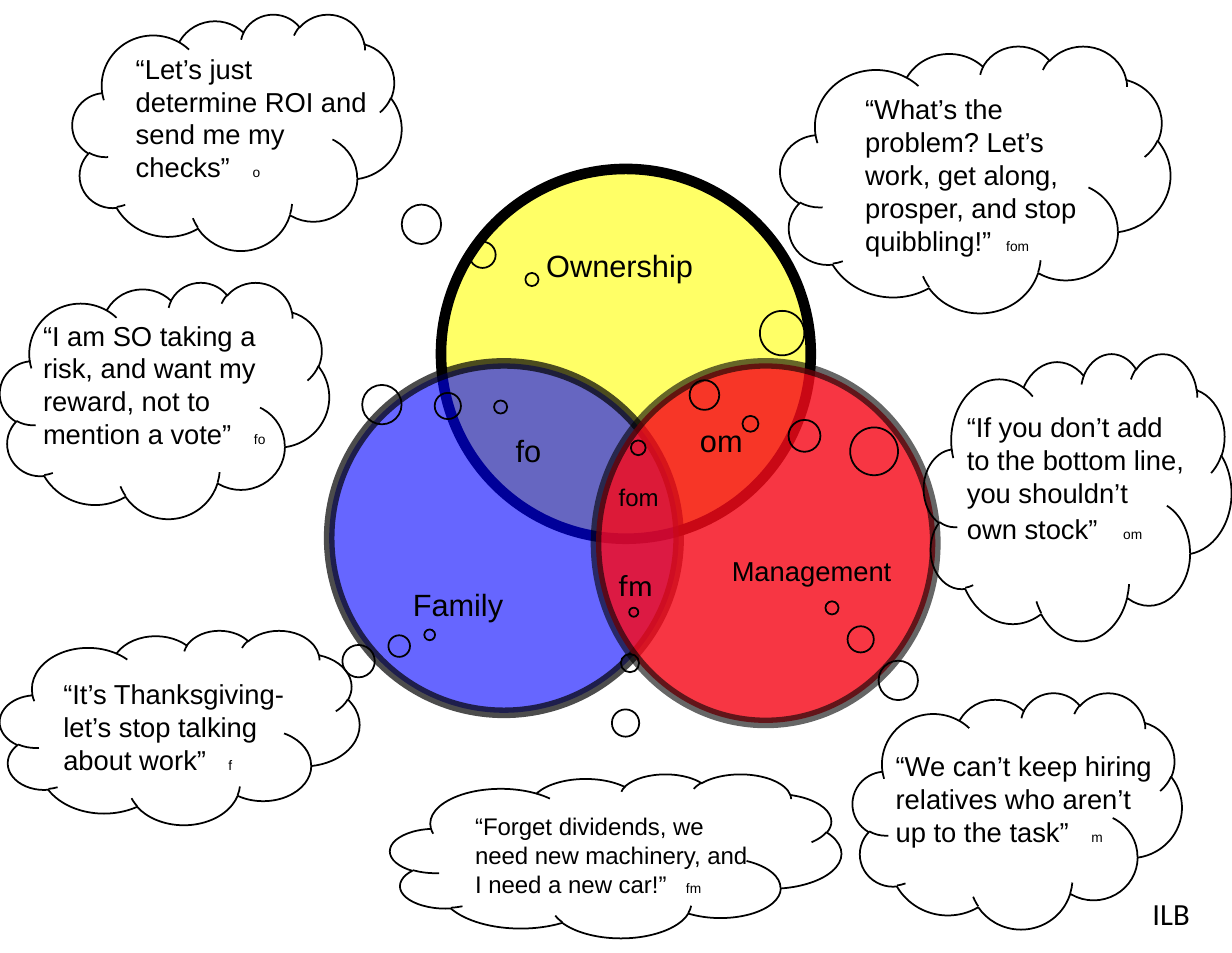
from dataclasses import dataclass

from lxml import etree
from pptx import Presentation
from pptx.dml.color import RGBColor
from pptx.enum.shapes import MSO_SHAPE
from pptx.enum.text import MSO_AUTO_SIZE
from pptx.oxml.ns import qn
from pptx.util import Emu, Pt

OVAL = MSO_SHAPE.OVAL
CLOUD = MSO_SHAPE.CLOUD_CALLOUT
GROW = MSO_AUTO_SIZE.SHAPE_TO_FIT_TEXT
BLANK_LAYOUT = 6
SLIDE_WIDTH = Pt(698)
SLIDE_HEIGHT = Pt(540)
EMU_PER_PX = 9144  # 100 px to the inch
BLACK = "000000"
TAG_SIZE = 7.8

Box = tuple[int, int, int, int]  # left, top, width, height in px


@dataclass(frozen=True)
class Circle:
    box: Box
    fill: str
    fill_opacity: int
    line_opacity: int


@dataclass(frozen=True)
class Label:
    text: str
    box: Box
    size: float = 17.4
    font: str = "Arial"
    wrap: bool = True


@dataclass(frozen=True)
class Quote:
    words: str
    tag: str
    text_box: Box
    tag_position: int
    cloud_box: Box
    tail: tuple[float, float]
    size: float = 15.5
    gap_size: float = 15.5


CIRCLES = [
    Circle((347, 133, 291, 291), "FFFF00", 60, 100),
    Circle((259, 286, 275, 275), "0000FF", 60, 69),
    Circle((469, 286, 267, 283), "F60A1A", 82, 60),
]

LABELS = [
    Label("Ownership", (420, 189, 170, 39)),
    Label("Management", (566, 431, 149, 62), size=15.5),
    Label("Family", (315, 456, 129, 39)),
    Label("fo", (396, 335, 57, 39)),
    Label("fom", (477, 375, 57, 33), size=13.6),
    Label("om", (541, 327, 57, 39)),
    Label("fm", (477, 440, 47, 39), font="Calibri", wrap=False),
    Label("ILB", (897, 699, 113, 39), font="Calibri"),
]

QUOTES = [
    Quote("“It’s Thanksgiving- let’s stop talking about work”", "f",
          (40, 528, 210, 88), 130, (0, 496, 283, 153), (0.695, -0.476)),
    Quote("“Forget dividends, we need new machinery, and I need a new car!”", "fm",
          (364, 634, 234, 79), 166, (307, 609, 355, 129), (0.04, -1.486),
          size=13.6, gap_size=13.6),
    Quote("“If you don’t add\vto the bottom line, you shouldn’t\vown stock”", "om",
          (751, 318, 202, 117), 123, (727, 278, 242, 226), (-1.064, -0.254),
          gap_size=17.4),
    Quote("“What’s the problem? Let’s work, get along, prosper, and stop quibbling!”",
          "fom", (671, 68, 186, 154), 111, (614, 36, 307, 210), (-0.864, 1.007)),
    Quote("“Let’s just determine ROI and send me my checks”", "o",
          (97, 36, 210, 113), 92, (57, 11, 259, 186), (0.896, 0.624)),
    Quote("“I am SO taking a risk, and want my reward, not to mention a vote”", "fo",
          (24, 246, 202, 113), 166, (0, 222, 259, 186), (1.021, 0.029)),
    Quote("“We can’t keep hiring relatives who aren’t up to the task”", "m",
          (695, 585, 234, 88), 154, (671, 545, 259, 186), (-0.563, -0.858)),
]


def px(length: int) -> Emu:
    return Emu(length * EMU_PER_PX)


def color(value: str) -> RGBColor:
    return RGBColor.from_string(value)


def add_outlined_shape(slide, kind, box: Box, line_width: float):
    shape = slide.shapes.add_shape(kind, *map(px, box))
    shape.shadow.inherit = False
    shape.fill.background()
    shape.line.color.rgb = color(BLACK)
    shape.line.width = Pt(line_width)
    return shape


def add_circle(slide, circle: Circle) -> None:
    shape = add_outlined_shape(slide, OVAL, circle.box, 6)
    shape.fill.solid()
    shape.fill.fore_color.rgb = color(circle.fill)
    # The fill colour comes before the line colour in the shape
    opacities = (circle.fill_opacity, circle.line_opacity)
    for element, opacity in zip(list(shape.element.iter(qn("a:srgbClr"))), opacities):
        etree.SubElement(element, qn("a:alpha"), val=str(opacity * 1000))


def add_text(slide, text: str, box: Box, size: float, font: str = "Arial",
             wrap: bool = True):
    shape = slide.shapes.add_textbox(*map(px, box))
    shape.text_frame.word_wrap = wrap
    shape.text_frame.auto_size = GROW
    paragraph = shape.text_frame.paragraphs[0]
    paragraph.text = text
    paragraph.font.name = font
    paragraph.font.size = Pt(size)
    paragraph.font.color.rgb = color(BLACK)
    return shape


def add_quote_text(slide, quote: Quote) -> None:
    shape = add_text(slide, quote.words, quote.text_box, quote.size)
    paragraph = shape.text_frame.paragraphs[0]
    for text, size in (("\t", quote.gap_size), (quote.tag, TAG_SIZE)):
        run = paragraph.add_run()
        run.text = text
        run.font.size = Pt(size)
    # A tab stop sets the small tag apart from the words
    properties = next(shape.element.iter(qn("a:pPr")))
    tab_list = etree.Element(qn("a:tabLst"))
    etree.SubElement(tab_list, qn("a:tab"), pos=str(int(px(quote.tag_position))), algn="l")
    properties.insert(0, tab_list)


def add_cloud(slide, quote: Quote) -> None:
    cloud = add_outlined_shape(slide, CLOUD, quote.cloud_box, 1)
    for index, value in enumerate(quote.tail):
        cloud.adjustments[index] = value


def main() -> None:
    presentation = Presentation()
    presentation.slide_width = SLIDE_WIDTH
    presentation.slide_height = SLIDE_HEIGHT
    slide = presentation.slides.add_slide(presentation.slide_layouts[BLANK_LAYOUT])

    # Three overlapping circles and their names
    for circle in CIRCLES:
        add_circle(slide, circle)
    for label in LABELS:
        add_text(slide, label.text, label.box, label.size, label.font, label.wrap)

    # Quotes, with the clouds in front
    for quote in QUOTES:
        add_quote_text(slide, quote)
    for quote in QUOTES:
        add_cloud(slide, quote)

    presentation.save("out.pptx")


if __name__ == "__main__":
    main()
